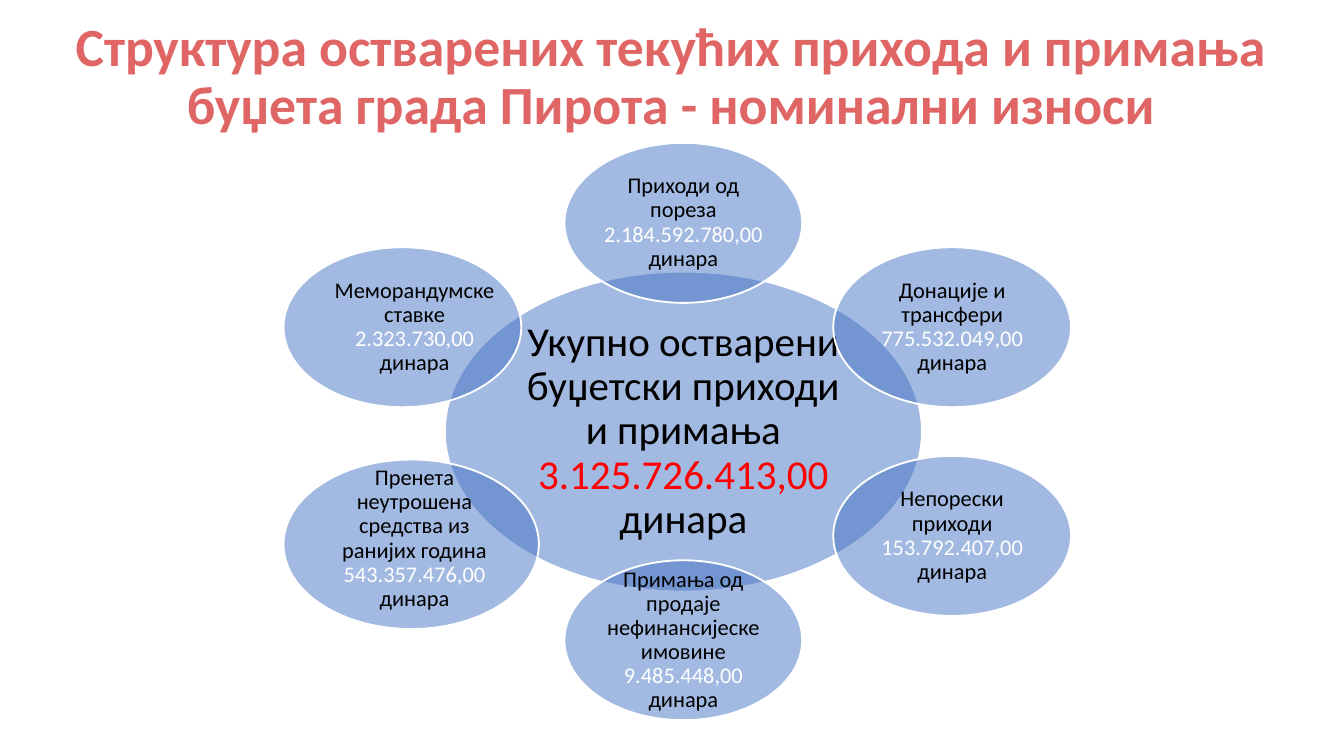
from lxml import etree
from pptx import Presentation
from pptx.dml.color import RGBColor
from pptx.enum import shapes, text
from pptx.oxml.ns import qn
from pptx.util import Pt

COLORS = {"title": "E06666", "bubble": "4372C3", "outline": "FFFFFF",
          "label": "000000", "amount": "FFFFFF", "total": "FF0000"}

deck = Presentation()
deck.slide_width, deck.slide_height = Pt(720), Pt(405)
slide = deck.slides.add_slide(deck.slide_layouts[6])


def add_bubble(center_x, center_y, width, height):
    bubble = slide.shapes.add_shape(
        shapes.MSO_SHAPE.OVAL, Pt(center_x - width / 2), Pt(center_y - height / 2),
        Pt(width), Pt(height))
    bubble.shadow.inherit = False
    bubble.fill.solid()
    bubble.fill.fore_color.rgb = RGBColor.from_string(COLORS["bubble"])
    fill_color = bubble._element.spPr.find(qn("a:solidFill"))[0]
    etree.SubElement(fill_color, qn("a:alpha")).set("val", "49000")
    bubble.line.color.rgb = RGBColor.from_string(COLORS["outline"])
    bubble.line.width = Pt(1)


def add_label(center_x, center_y, width, height, margin, size, runs,
              anchor=text.MSO_ANCHOR.MIDDLE, bold=False):
    label = slide.shapes.add_textbox(
        Pt(center_x - width / 2), Pt(center_y - height / 2), Pt(width), Pt(height))
    frame = label.text_frame
    frame.word_wrap = True
    frame.vertical_anchor = anchor
    frame.margin_left = frame.margin_right = Pt(margin[0])
    frame.margin_top = frame.margin_bottom = Pt(margin[1])
    paragraph = frame.paragraphs[0]
    paragraph.alignment = text.PP_ALIGN.CENTER
    paragraph.line_spacing = 0.9
    for wording, color in runs:
        if wording == "\n":
            paragraph.add_line_break()
            continue
        run = paragraph.add_run()
        run.text = wording
        run.font.name = "Calibri"
        run.font.size = Pt(size)
        run.font.bold = bold
        run.font.color.rgb = RGBColor.from_string(COLORS[color])


# Title
add_label(359.6, 45, 676, 62.6, (7.2, 3.6), 28.8,
          [("Структура остварених текућих прихода и примања", "title"),
           ("\n", "title"),
           ("буџета града Пирота - номинални износи", "title")],
          anchor=text.MSO_ANCHOR.BOTTOM, bold=True)

# Total in the middle
HUB_X, HUB_Y = 366.1, 231.2
add_bubble(HUB_X, HUB_Y, 255.6, 171.4)
add_label(HUB_X, HUB_Y, 180.8, 121, (2.2, 2.2), 22,
          [("Укупно остварени буџетски приходи и примања ", "label"),
           ("3.125.726.413,00", "total"), (" динара", "label")])

# Revenue sources around it: column, row, bubble shift, bubble size, label width
COLUMN_STEP, ROW_STEP = 144, 55.9
USUAL = (127.4, 85.7)
sources = [
    (0, -2, (0, 0), USUAL, 90, "Приходи од пореза ", "2.184.592.780,00 "),
    (1, -1, (0, 0), USUAL, 90, "Донације и трансфери ", "775.532.049,00 "),
    (1, 1, (0, 0), USUAL, 90, "Непорески приходи ", "153.792.407,00 "),
    (0, 2, (0, 0), USUAL, 90, "Примања од продаје нефинансијеске имовине ",
     "9.485.448,00 "),
    (-1, 1, (-1.8, 4.5), (136.8, 90.8), 96.5,
     "Пренета неутрошена средства из ранијих година ", "543.357.476,00 "),
    (-1, -1, (-6.5, 0), USUAL, 90, "Меморандумске ставке ", "2.323.730,00 "),
]
for column, row, shift, size, label_width, source, amount in sources:
    x, y = HUB_X + column * COLUMN_STEP, HUB_Y + row * ROW_STEP
    add_bubble(x + shift[0], y + shift[1], *size)
    add_label(x, y + shift[1] / 3, label_width, 60.5, (0.7, 0.7), 12,
              [(source, "label"), (amount, "amount"), ("динара", "label")])

deck.save("out.pptx")
